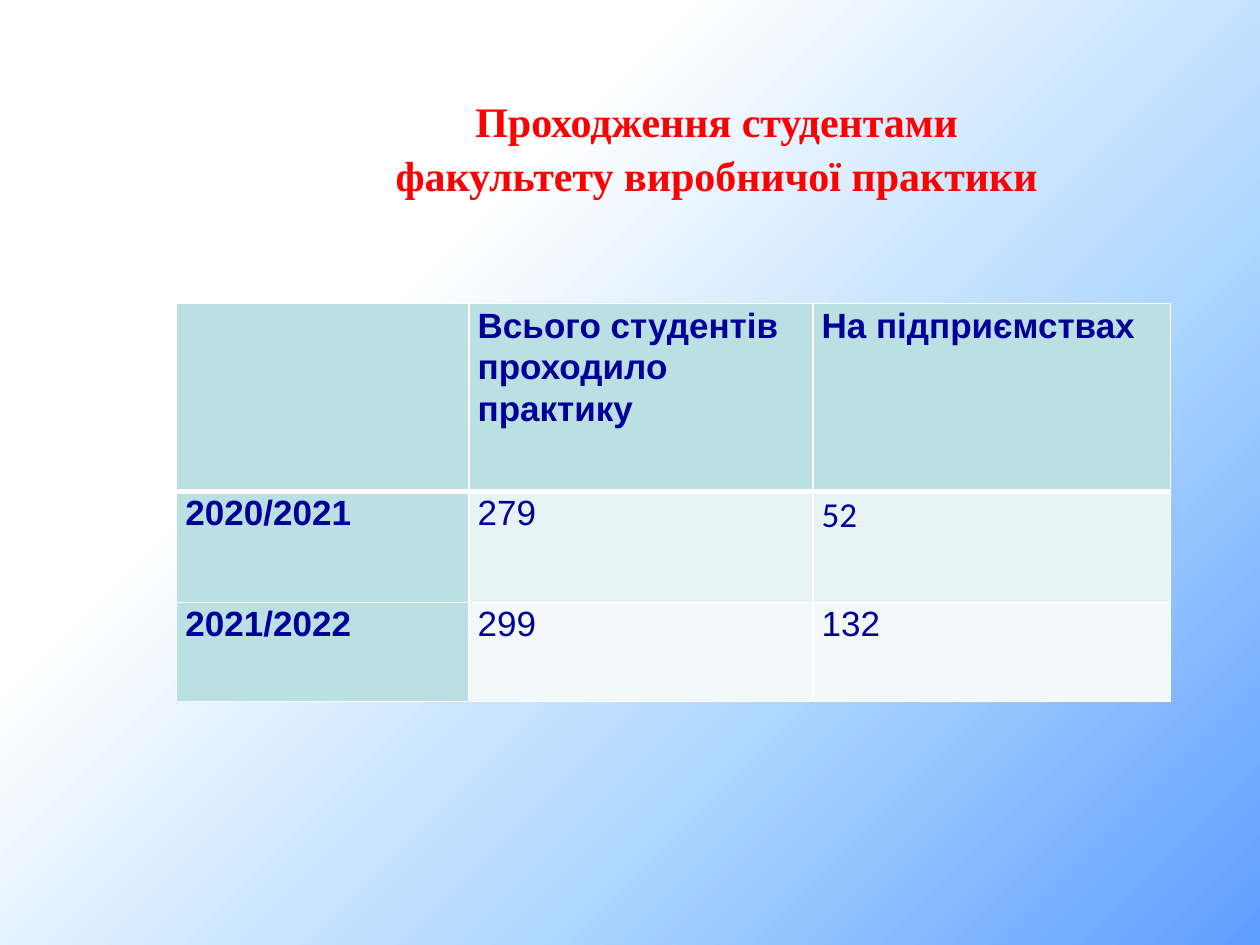
from lxml import etree
from pptx import Presentation
from pptx.dml.color import RGBColor
from pptx.enum import text
from pptx.oxml.ns import qn
from pptx.util import Pt

NAVY, RED, WHITE = "000099", "FF0000", "FFFFFF"
TEAL, PALE, PALEST = "BBE0E3", "E7F3F4", "F3F9FA"

COLS = [167, 196.5, 204.5]
ROWS = [107.3, 63.4, 56.8]
CELLS = [
    ["", "Всього студентів проходило практику", "На підприємствах"],
    ["2020/2021", "279", "52"],
    ["2021/2022", "299", "132"],
]
BODY_FILLS = [TEAL, PALE, PALEST]


def rgb(value):
    return RGBColor.from_string(value)


def add_text(tf, words, size=20, font="Arial", color=NAVY, bold=False,
             align=text.PP_ALIGN.LEFT):
    tf.word_wrap = True
    p = tf.paragraphs[0]
    p.alignment = align
    p.line_spacing = 1.07
    p.space_before, p.space_after = Pt(0), Pt(8)
    r = p.add_run()
    r.text = words
    r.font.size, r.font.name, r.font.bold = Pt(size), font, bold
    r.font.color.rgb = rgb(color)


def add_solid(parent, color):
    solid = etree.SubElement(parent, qn("a:solidFill"))
    etree.SubElement(solid, qn("a:srgbClr"), val=color)


def set_background(s):
    """Diagonal gradient from white at top left to blue at bottom right."""
    fill = s.background.fill
    fill.gradient()
    fill.gradient_angle = 315
    stops = s.background._cSld.find(".//" + qn("a:gsLst"))
    for stop in list(stops):
        stops.remove(stop)
    for pos, color in [(0, WHITE), (31, WHITE), (67, "AED7FF"), (100, "5E9EFF")]:
        stop = etree.SubElement(stops, qn("a:gs"), pos=str(pos * 1000))
        etree.SubElement(stop, qn("a:srgbClr"), val=color)


def add_title(s, left, top, width, height):
    sp = s.shapes.title
    sp.left, sp.top, sp.width, sp.height = map(Pt, (left, top, width, height))
    tf = sp.text_frame
    tf.auto_size = text.MSO_AUTO_SIZE.NONE
    tf.vertical_anchor = text.MSO_ANCHOR.TOP
    add_text(tf, "Проходження студентами факультету виробничої практики",
             size=24, font="Times New Roman", color=RED, bold=True,
             align=text.PP_ALIGN.CENTER)


def set_borders(cell, **widths):
    tc_pr = cell._tc.get_or_add_tcPr()
    for side in "LRTB":
        width = Pt(widths.get(side, 1))
        add_solid(etree.SubElement(tc_pr, qn("a:ln" + side), w=str(width)), WHITE)


def add_practice_table(s, left, top):
    frame = s.shapes.add_table(len(ROWS), len(COLS), Pt(left), Pt(top),
                               Pt(sum(COLS)), Pt(sum(ROWS)))
    table = frame.table
    for column, width in zip(table.columns, COLS):
        column.width = Pt(width)
    for row, height in zip(table.rows, ROWS):
        row.height = Pt(height)
    for i, row in enumerate(CELLS):
        for j, words in enumerate(row):
            cell = table.cell(i, j)
            heading = i == 0 or j == 0
            set_borders(cell, B=3 if i == 0 else 1, T=3 if i == 1 else 1)
            cell.fill.solid()
            cell.fill.fore_color.rgb = rgb(TEAL if heading else BODY_FILLS[i])
            cell.margin_left = cell.margin_right = Pt(5)
            cell.margin_top = cell.margin_bottom = Pt(0)
            if words:
                add_text(cell.text_frame, words, bold=heading,
                         font="Calibri" if words == "52" else "Arial")


def main():
    prs = Presentation()
    prs.slide_width, prs.slide_height = Pt(720), Pt(540)
    s = prs.slides.add_slide(prs.slide_layouts[5])
    set_background(s)
    add_practice_table(s, 101, 173.5)
    add_title(s, 209, 49, 401, 68.5)
    prs.save("out.pptx")


if __name__ == "__main__":
    main()
